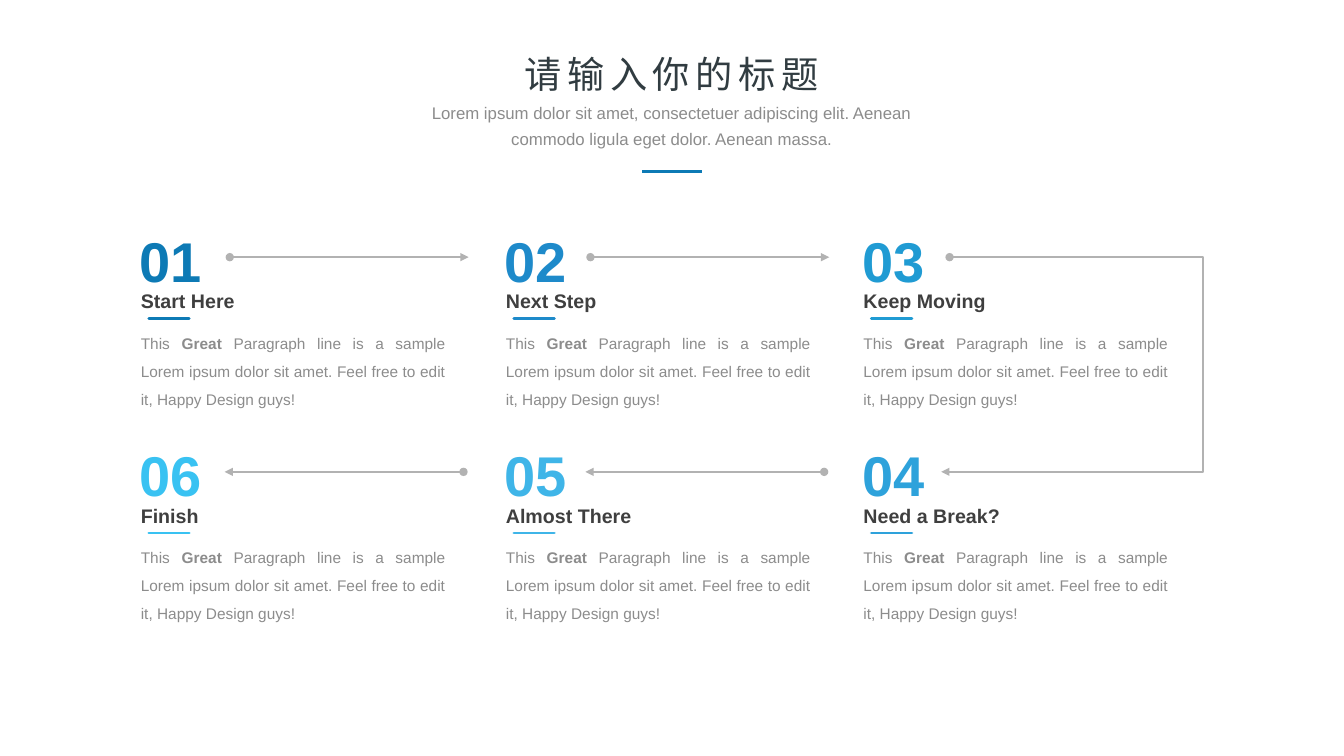
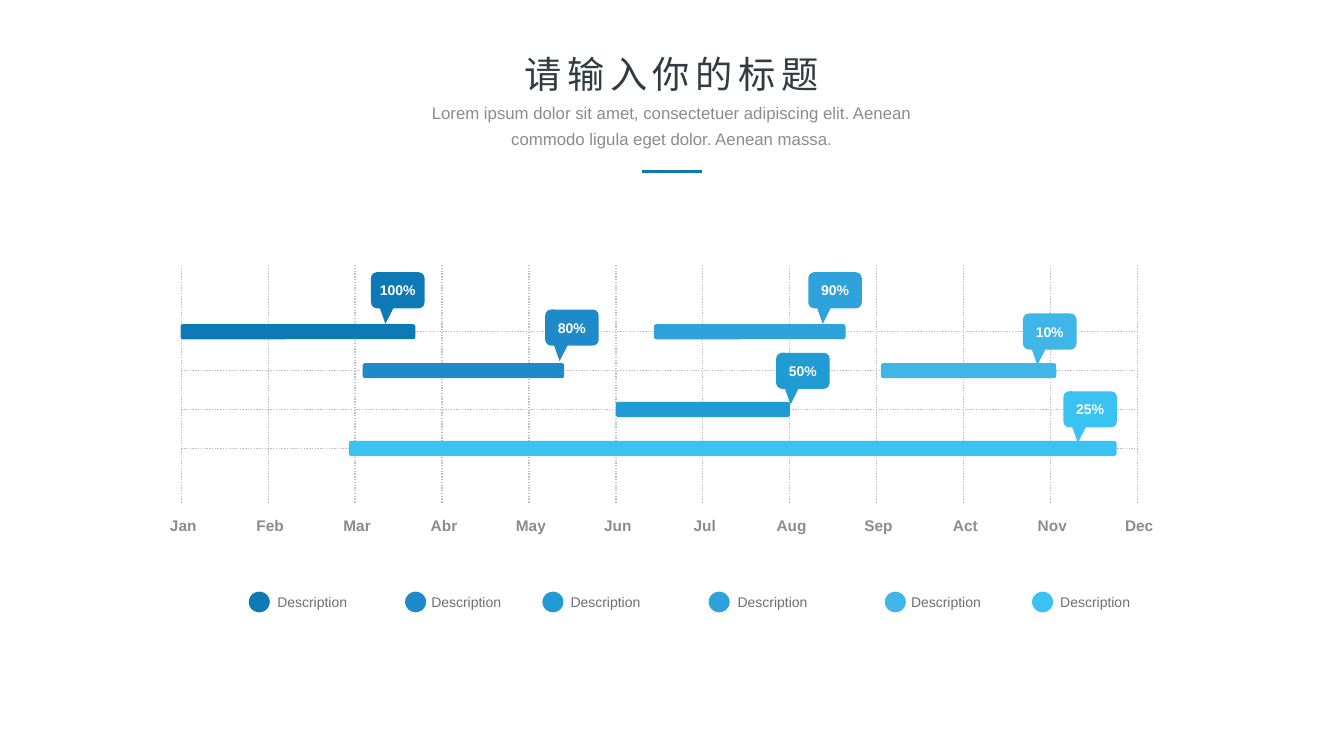
from pptx import Presentation
from pptx import util as u
from pptx.dml.color import RGBColor
from pptx.enum import dml, shapes, text
from pptx.oxml import ns
from lxml import etree

Cm, Pt = u.Cm, u.Pt
FONT = "Arial"
TITLE = RGBColor(0x31, 0x3C, 0x41)
HEADING = RGBColor(0x3F, 0x3F, 0x3F)
BODY = RGBColor(0x8C, 0x8C, 0x8C)
LEGEND = RGBColor(0x6F, 0x6F, 0x6F)
ARROW = RGBColor(0xB2, 0xB2, 0xB2)
GRID = RGBColor(0xBF, 0xBF, 0xBF)
WHITE = RGBColor(0xFF, 0xFF, 0xFF)
BLUES = [
    RGBColor(0x0D, 0x7A, 0xB5),
    RGBColor(0x1E, 0x8A, 0xCA),
    RGBColor(0x20, 0x9B, 0xD3),
    RGBColor(0x2E, 0xA2, 0xDB),
    RGBColor(0x3F, 0xB5, 0xE8),
    RGBColor(0x39, 0xC2, 0xF2),
]
LEFT, CENTER = text.PP_ALIGN.LEFT, text.PP_ALIGN.CENTER


def set_text(shape, parts, size, color, bold=False, align=LEFT, margins=(0, 0)):
    """Fill a shape with one paragraph made of the given runs."""
    frame = shape.text_frame
    frame.word_wrap = True
    frame.margin_left = frame.margin_right = Cm(margins[0])
    frame.margin_top = frame.margin_bottom = Cm(margins[1])
    paragraph = frame.paragraphs[0]
    for part in parts:
        paragraph.add_run().text = part
    paragraph.alignment = align
    font = paragraph.font
    font.name, font.size, font.bold = FONT, Pt(size), bold
    font.color.rgb = color
    return paragraph


def add_line(slide, start, end, color, width, head=None, tail=None,
             kind=shapes.MSO_CONNECTOR.STRAIGHT):
    """Draw a connector between two points given in centimetres."""
    line = slide.shapes.add_connector(kind, *map(Cm, start + end))
    line.line.color.rgb = color
    line.line.width = Pt(width)
    properties = line._element.spPr
    outline = properties.find(ns.qn("a:ln"))
    for tag, style in (("a:headEnd", head), ("a:tailEnd", tail)):
        if style:
            etree.SubElement(outline, ns.qn(tag), type=style)
    etree.SubElement(properties, ns.qn("a:effectLst"))
    return line


prs = Presentation()
prs.slide_width, prs.slide_height = Cm(33.87), Cm(19.05)
title_only = prs.slide_layouts[5]
steps_slide = prs.slides.add_slide(title_only)
schedule_slide = prs.slides.add_slide(title_only)

# Shared header: title, subtitle, accent line
for slide in prs.slides:
    title = slide.shapes.title
    title.left, title.top, title.width, title.height = map(Cm, (11.93, 1.37, 10, 1.17))
    title.text_frame.vertical_anchor = text.MSO_ANCHOR.TOP
    title.text_frame.auto_size = text.MSO_AUTO_SIZE.NONE
    heading = set_text(title, ["请输入你的标题"], 26.6, TITLE, align=CENTER,
                       margins=(0.25, 0.13))
    heading.line_spacing = 0.8
    heading.runs[0]._r.get_or_add_rPr().set("spc", "400")

    subtitle = slide.shapes.add_textbox(*map(Cm, (10.26, 2.31, 13.34, 1.52)))
    intro = set_text(
        subtitle,
        ["Lorem ipsum dolor sit amet, consectetuer adipiscing elit. "
         "Aenean commodo ligula eget dolor. Aenean massa."],
        12, BODY, align=CENTER, margins=(0.25, 0.13))
    intro.line_spacing = 1.3
    add_line(slide, (16.18, 4.32), (17.7, 4.32), BLUES[0], 2)

# Steps: top row runs left to right, bottom row runs back
COLUMNS = [3.3, 12.5, 21.51]
ARROW_STARTS = [5.79, 14.88, 23.93]
ARROW_LENGTH = 6.02
ROW_PITCH = 5.4
ARROW_ROWS = [6.48, 11.89]
STEPS = ["Start Here", "Next Step", "Keep Moving", "Need a Break?", "Almost There", "Finish"]
DETAIL = ["This ", "Great", " Paragraph line is a sample Lorem ipsum dolor sit amet. "
          "Feel free to edit it, Happy Design guys!"]

for i, step in enumerate(STEPS):
    row = i // 3
    column = 5 - i if row else i
    left, drop = COLUMNS[column], row * ROW_PITCH

    number = steps_slide.shapes.add_textbox(*map(Cm, (left + 0.2, 5.7 + drop, 1.6, 1.7)))
    number.text_frame.auto_size = text.MSO_AUTO_SIZE.NONE
    set_text(number, [f"{i + 1:02}"], 40, BLUES[i], bold=True, align=CENTER)
    number.text_frame.word_wrap = False

    label = steps_slide.shapes.add_textbox(*map(Cm, (left, 7.16 + drop, 8.18, 0.86)))
    set_text(label, [step], 14, HEADING, bold=True, margins=(0.25, 0.13))
    underline = add_line(steps_slide, (left + 0.45, 8.03 + drop),
                         (left + 1.47, 8.03 + drop), BLUES[i], 2)
    underline._element.spPr.find(ns.qn("a:ln")).set("cap", "rnd")

    detail = steps_slide.shapes.add_textbox(*map(Cm, (left, 8.05 + drop, 8.18, 2.31)))
    paragraph = set_text(detail, DETAIL, 11, BODY, align=text.PP_ALIGN.JUSTIFY,
                         margins=(0.25, 0.13))
    paragraph.line_spacing = Pt(20)
    paragraph.runs[1].font.bold = True

    # Arrow beside the number; the right-hand column turns the corner
    start = ARROW_STARTS[column] - 0.13 * row
    ends = [(start, ARROW_ROWS[row]), (start + ARROW_LENGTH, ARROW_ROWS[row])]
    if row:
        ends.reverse()
    if column < 2:
        add_line(steps_slide, *ends, ARROW, 1.5, "oval", "triangle")
    elif row == 0:
        add_line(steps_slide, *ends, ARROW, 1.5, "oval")
        turn = add_line(steps_slide, ends[1], (23.72, ARROW_ROWS[1]), ARROW, 1.5,
                        tail="triangle", kind=shapes.MSO_CONNECTOR.ELBOW)
        guides = turn._element.spPr.find(ns.qn("a:prstGeom")).get_or_add_avLst()
        etree.SubElement(guides, ns.qn("a:gd"), name="adj1", fmla="val -6000")

# Schedule grid and months
GRID_LEFT, MONTH_STEP = 4.57, 2.19
GRID_TOP, GRID_BOTTOM = 6.68, 12.67
ROW_TOP, ROW_STEP = 8.36, 0.98
MONTHS = ["Jan", "Feb", "Mar", "Abr", "May", "Jun", "Jul", "Aug", "Sep", "Act", "Nov", "Dec"]

row_ys = [ROW_TOP + ROW_STEP * i for i in range(4)]
month_xs = [GRID_LEFT + MONTH_STEP * i for i in range(len(MONTHS))]
grid_lines = [((GRID_LEFT, y), (28.7, y)) for y in row_ys]
grid_lines += [((x, GRID_TOP), (x, GRID_BOTTOM)) for x in month_xs]
for start, end in grid_lines:
    add_line(schedule_slide, start, end, GRID, 1).line.dash_style = dml.MSO_LINE.ROUND_DOT
for month, x in zip(MONTHS, month_xs):
    caption = schedule_slide.shapes.add_textbox(*map(Cm, (x - 0.55, 13, 1.2, 0.48)))
    set_text(caption, [month], 11, BODY, bold=True, align=CENTER)

# Tasks: row, bar left, bar width, callout left, callout top, progress
TASKS = [
    (0, 4.55, 5.92, 9.35, 6.86, "100%"),
    (1, 9.14, 5.08, 13.74, 7.8, "80%"),
    (2, 15.52, 4.39, 19.56, 8.89, "50%"),
    (0, 16.48, 4.83, 20.37, 6.86, "90%"),
    (1, 22.2, 4.42, 25.78, 7.9, "10%"),
    (3, 8.79, 19.35, 26.8, 9.86, "25%"),
]
# Legend: dot left, text left
KEYS = [(6.27, 6.99), (10.21, 10.87), (13.67, 14.38),
        (17.86, 18.59), (22.3, 22.96), (26.01, 26.72)]
BAR = shapes.MSO_SHAPE.ROUNDED_RECTANGLE
CALLOUT = shapes.MSO_SHAPE.ROUNDED_RECTANGULAR_CALLOUT
DOT = shapes.MSO_SHAPE.OVAL

for color, task, (dot_left, key_left) in zip(BLUES, TASKS, KEYS):
    row, bar_left, bar_width, callout_left, callout_top, progress = task
    marks = [
        (BAR, bar_left, row_ys[row] - 0.19, bar_width, 0.38),
        (CALLOUT, callout_left, callout_top, 1.35, 0.91),
        (DOT, dot_left, 14.91, 0.53, 0.52),
    ]
    for kind, *box in marks:
        mark = schedule_slide.shapes.add_shape(kind, *map(Cm, box))
        mark.shadow.inherit = False
        mark.fill.solid()
        mark.fill.fore_color.rgb = color
        mark.line.fill.background()
        if kind == CALLOUT:
            mark.adjustments[0], mark.adjustments[1] = -0.23, 0.93
            set_text(mark, [progress], 10, WHITE, bold=True, align=CENTER)
            mark.text_frame.word_wrap = False
            mark.text_frame.vertical_anchor = text.MSO_ANCHOR.MIDDLE
    key = schedule_slide.shapes.add_textbox(*map(Cm, (key_left, 14.96, 2.5, 0.43)))
    set_text(key, ["Description"], 10, LEGEND)

prs.save("out.pptx")
